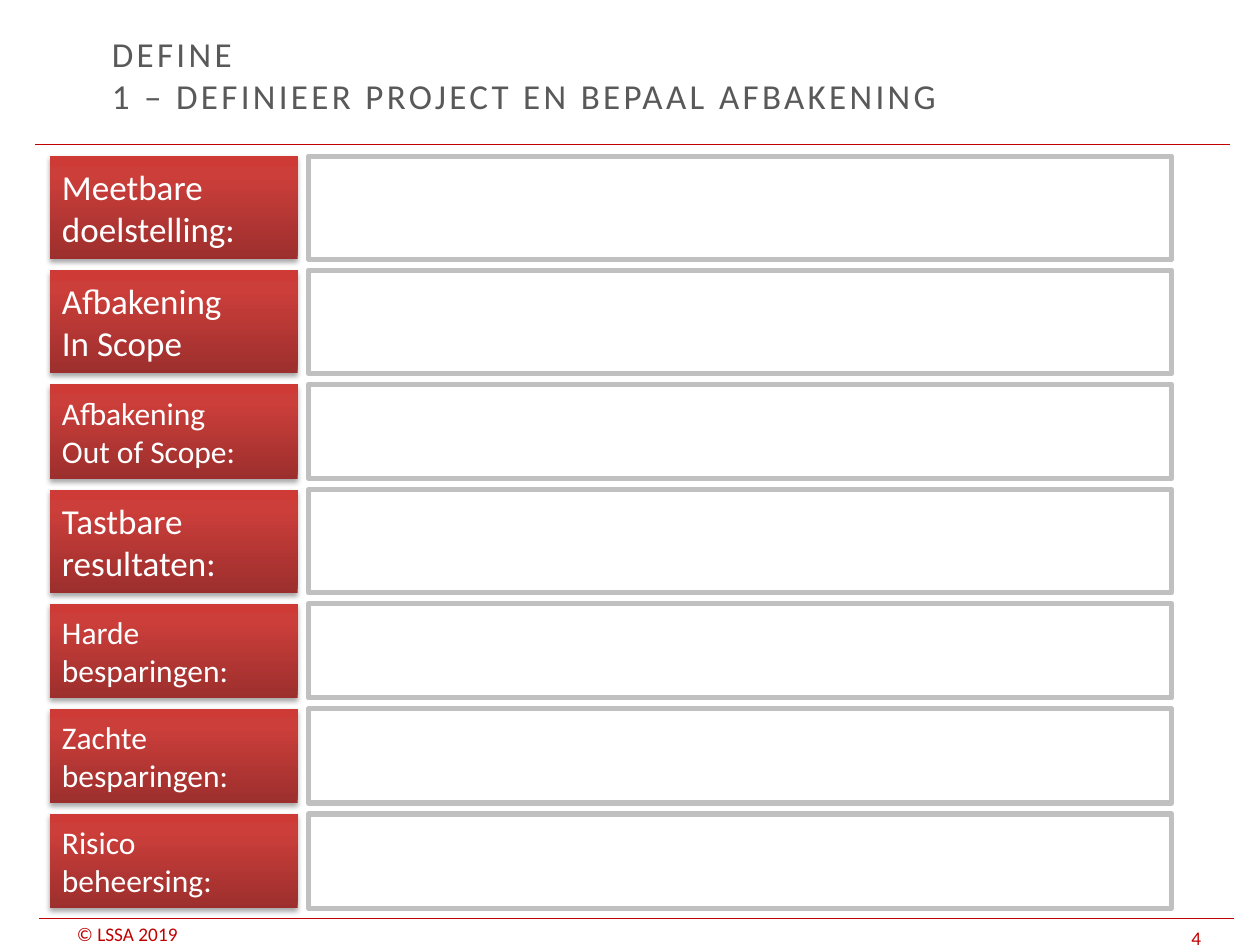
from dataclasses import dataclass

from lxml import etree
from pptx import Presentation
from pptx import util as u
from pptx.dml.color import RGBColor
from pptx.enum import shapes, text
from pptx.oxml import parse_xml
from pptx.oxml.ns import nsdecls, qn

COLORS = {
    "white": "FFFFFF",
    "frame": "C0C0C0",
    "accent": "C00000",
    "title": "595959",
    "shadow": "000000",
}
LABEL_GRADIENT = {0: "9C2F2D", 80: "CB3E3A", 100: "CE3B37"}
FONT = "Calibri"

LABEL_LEFT, LABEL_WIDTH = 1.0, 5.0
ANSWER_LEFT, ANSWER_WIDTH = 6.22, 17.4
FIRST_TOP, ROW_GAP = 3.15, 0.22
ROW_HEIGHTS = {20: 2.08, 18: 1.9}  # label text size in points: row height in cm


@dataclass
class Row:
    label: str
    size: int


@dataclass
class Footer:
    words: str
    left: float
    top: float
    width: float
    height: float


@dataclass
class Rule:
    left: float
    right: float
    top: float


ROWS = [
    Row("Meetbare doelstelling:", 20),
    Row("Afbakening\nIn Scope", 20),
    Row("Afbakening\nOut of Scope:", 18),
    Row("Tastbare resultaten:", 20),
    Row("Harde besparingen:", 18),
    Row("Zachte besparingen:", 18),
    Row("Risico beheersing:", 18),
]
FOOTERS = [
    Footer("© LSSA 2019", 1.3, 18.59, 3.6, 0.46),
    Footer("4", 23.77, 18.57, 1.63, 0.56),
]
RULES = [Rule(0.71, 24.79, 2.92), Rule(0.79, 24.87, 18.52)]


def rgb(name: str) -> RGBColor:
    return RGBColor.from_string(COLORS[name])


def format_text(frame, size: int, color: str) -> None:
    for para in frame.paragraphs:
        para.alignment = text.PP_ALIGN.LEFT
        for span in para.runs:
            span.font.name = FONT
            span.font.size = u.Pt(size)
            span.font.color.rgb = rgb(color)


def add_title(page, words: str) -> None:
    title = page.shapes.title
    title.left, title.top = u.Cm(2.0), u.Cm(0.66)
    title.width, title.height = u.Cm(18.0), u.Cm(1.68)
    frame = title.text_frame
    frame.text = words
    frame.auto_size = text.MSO_AUTO_SIZE.NONE
    frame.vertical_anchor = text.MSO_ANCHOR.MIDDLE
    format_text(frame, 20, "title")
    para = frame.paragraphs[0]
    for span in para.runs:
        span.font._element.set("spc", "190")
    for line_break in para._p.findall(qn("a:br")):
        etree.SubElement(line_break, qn("a:rPr"), sz="2000")


def add_rule(page, rule: Rule) -> None:
    line = page.shapes.add_connector(
        shapes.MSO_CONNECTOR.STRAIGHT,
        u.Cm(rule.left), u.Cm(rule.top), u.Cm(rule.right), u.Cm(rule.top),
    )
    line.line.color.rgb = rgb("accent")
    line.line.width = u.Pt(0.75)
    etree.SubElement(line._element.spPr, qn("a:effectLst"))


def add_footer(page, footer: Footer) -> None:
    box = page.shapes.add_textbox(
        u.Cm(footer.left), u.Cm(footer.top), u.Cm(footer.width), u.Cm(footer.height)
    )
    frame = box.text_frame
    frame.text = footer.words
    frame.word_wrap = False
    frame.margin_top = frame.margin_bottom = 0
    frame.vertical_anchor = text.MSO_ANCHOR.BOTTOM
    format_text(frame, 11, "accent")


def add_box(page, left: float, top: float, width: float, height: float):
    box = page.shapes.add_shape(
        shapes.MSO_SHAPE.RECTANGLE, u.Cm(left), u.Cm(top), u.Cm(width), u.Cm(height)
    )
    box.shadow.inherit = False
    return box


def add_answer(page, top: float, height: float) -> None:
    box = add_box(page, ANSWER_LEFT, top, ANSWER_WIDTH, height)
    box.fill.solid()
    box.fill.fore_color.rgb = rgb("white")
    box.line.color.rgb = rgb("frame")
    box.line.width = u.Pt(3)


def add_label(page, row: Row, top: float, height: float) -> None:
    box = add_box(page, LABEL_LEFT, top, LABEL_WIDTH, height)
    box.line.fill.background()
    style_label(box)
    frame = box.text_frame
    frame.text = row.label
    frame.word_wrap = True
    frame.vertical_anchor = text.MSO_ANCHOR.MIDDLE
    format_text(frame, row.size, "white")


def style_label(box) -> None:
    """Give the box an upward gradient and a soft shadow below it."""
    stops = "".join(
        f'<a:gs pos="{position * 1000}"><a:srgbClr val="{color}"/></a:gs>'
        for position, color in LABEL_GRADIENT.items()
    )
    gradient = parse_xml(
        f'<a:gradFill {nsdecls("a")} rotWithShape="1"><a:gsLst>{stops}</a:gsLst>'
        '<a:lin ang="16200000" scaled="0"/></a:gradFill>'
    )
    shadow = parse_xml(
        f'<a:outerShdw {nsdecls("a")} blurRad="{u.Pt(3.1)}" dist="{u.Pt(1.8)}" '
        f'dir="5400000" rotWithShape="0"><a:srgbClr val="{COLORS["shadow"]}">'
        '<a:alpha val="35000"/></a:srgbClr></a:outerShdw>'
    )
    properties = box._element.spPr
    properties.find(qn("a:prstGeom")).addnext(gradient)
    properties.find(qn("a:effectLst")).append(shadow)


def main() -> None:
    deck = Presentation()
    deck.slide_width, deck.slide_height = u.Cm(25.4), u.Cm(19.05)
    page = deck.slides.add_slide(deck.slide_layouts[5])
    add_title(page, "DEFINE\v1 – DEFINIEER PROJECT EN BEPAAL AFBAKENING")
    for rule in RULES:
        add_rule(page, rule)
    for footer in FOOTERS:
        add_footer(page, footer)
    top = FIRST_TOP
    for row in ROWS:
        height = ROW_HEIGHTS[row.size]
        add_answer(page, top, height)
        add_label(page, row, top, height)
        top += height + ROW_GAP
    deck.save("out.pptx")


if __name__ == "__main__":
    main()
